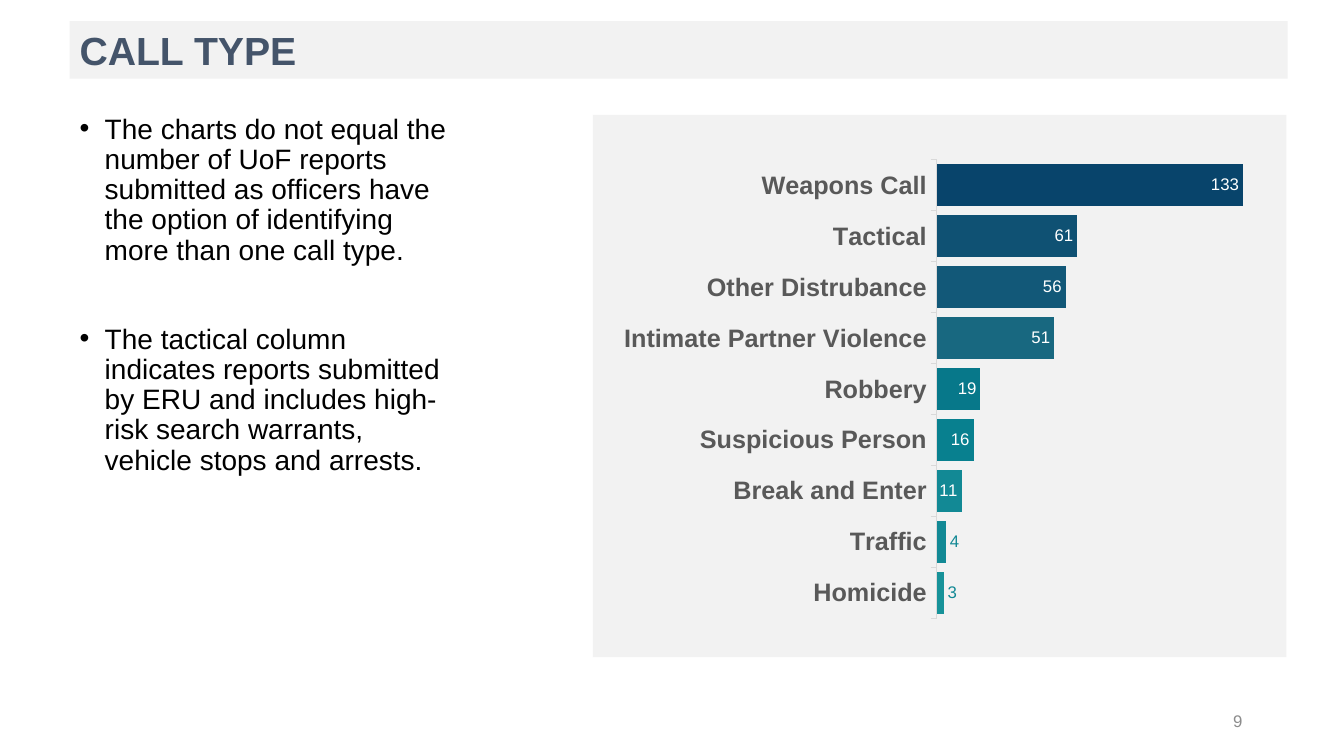
from dataclasses import dataclass

from lxml.etree import SubElement
from pptx import Presentation
from pptx.chart.data import CategoryChartData
from pptx.dml.color import RGBColor
from pptx.enum.chart import XL_CHART_TYPE, XL_LABEL_POSITION, XL_TICK_MARK
from pptx.enum.shapes import MSO_SHAPE
from pptx.enum.text import MSO_ANCHOR, PP_ALIGN
from pptx.oxml.ns import qn
from pptx.util import Inches, Pt


@dataclass(frozen=True)
class Theme:
    """Colours, font and type sizes of the slide."""
    font: str = "Arial"
    panel: str = "F2F2F2"
    title: str = "44546A"
    body: str = "000000"
    muted: str = "8C8C8C"
    axis_text: str = "595959"
    axis_line: str = "D9D9D9"
    label_in: str = "FFFFFF"
    label_out: str = "128995"
    title_size: int = 28
    body_size: int = 20
    axis_size: int = 18
    small_size: int = 12


THEME = Theme()

CALLS = [
    ("Homicide", 3, "179299"),
    ("Traffic", 4, "128995"),
    ("Break and Enter", 11, "128995"),
    ("Suspicious Person", 16, "08808F"),
    ("Robbery", 19, "07788A"),
    ("Intimate Partner Violence", 51, "186880"),
    ("Other Distrubance", 56, "125878"),
    ("Tactical", 61, "0F5173"),
    ("Weapons Call", 133, "08446B"),
]
SMALL_COUNT = 10

NOTES = [
    "The charts do not equal the number of UoF reports submitted as officers "
    "have the option of identifying more than one call type.",
    "The tactical column indicates reports submitted by ERU and includes "
    "high-risk search warrants, vehicle stops and arrests.",
]


def style_font(font, size, color, bold=False):
    """Apply the theme font with a size and colour."""
    font.name = THEME.font
    font.size = Pt(size)
    font.bold = bold
    font.color.rgb = RGBColor.from_string(color)


def add_run(p, text, size, color, bold=False):
    """Append one styled run to a paragraph."""
    r = p.add_run()
    r.text = text
    style_font(r.font, size, color, bold)


def add_panel(s, left, top, width, height):
    """Add a plain grey rectangle."""
    sp = s.shapes.add_shape(MSO_SHAPE.RECTANGLE, Inches(left), Inches(top),
                            Inches(width), Inches(height))
    sp.shadow.inherit = False
    sp.fill.solid()
    sp.fill.fore_color.rgb = RGBColor.from_string(THEME.panel)
    sp.line.fill.background()
    return sp


def add_text_frame(s, left, top, width, height):
    """Add a wrapping text box and return its text frame."""
    box = s.shapes.add_textbox(Inches(left), Inches(top),
                               Inches(width), Inches(height))
    box.text_frame.word_wrap = True
    return box.text_frame


def add_title(s, text):
    """Add the title band."""
    tf = add_panel(s, 0.69, 0.21, 12.08, 0.57).text_frame
    tf.vertical_anchor = MSO_ANCHOR.TOP
    p = tf.paragraphs[0]
    p.alignment = PP_ALIGN.LEFT
    add_run(p, text, THEME.title_size, THEME.title, bold=True)


def add_bullets(s, notes):
    """Add the bulleted notes with a wide gap between them."""
    tf = add_text_frame(s, 0.69, 1.09, 3.85, 6.02)
    for i, note in enumerate(notes):
        p = tf.add_paragraph() if i else tf.paragraphs[0]
        p.line_spacing = 0.9
        p.space_before = Pt(42 if i else 0)
        pPr = p._p.get_or_add_pPr()
        pPr.set("marL", str(Inches(0.25)))
        pPr.set("indent", str(-Inches(0.25)))
        SubElement(pPr, qn("a:buFont"), typeface=THEME.font)
        SubElement(pPr, qn("a:buChar"), char="•")
        add_run(p, note, THEME.body_size, THEME.body)


def add_page_number(s, number):
    """Add the page number at the lower right."""
    tf = add_text_frame(s, 9.42, 6.95, 3, 0.4)
    tf.vertical_anchor = MSO_ANCHOR.MIDDLE
    p = tf.paragraphs[0]
    p.alignment = PP_ALIGN.RIGHT
    add_run(p, number, THEME.small_size, THEME.muted)


def style_axes(chart):
    """Show the category axis and hide the value axis."""
    axis = chart.category_axis
    axis.major_tick_mark = XL_TICK_MARK.OUTSIDE
    axis.has_major_gridlines = False
    axis.format.line.color.rgb = RGBColor.from_string(THEME.axis_line)
    axis.format.line.width = Pt(0.75)
    style_font(axis.tick_labels.font, THEME.axis_size, THEME.axis_text, bold=True)
    values = chart.value_axis
    values.visible = False
    values.has_major_gridlines = False
    values.minimum_scale = 0
    values.maximum_scale = 140


def add_call_chart(s, calls):
    """Add the bar chart of call types with its own colour per bar."""
    data = CategoryChartData()
    data.categories = [name for name, _, _ in calls]
    data.add_series("Series 1", [count for _, count, _ in calls])
    chart = s.shapes.add_chart(XL_CHART_TYPE.BAR_CLUSTERED, Inches(6.06),
                               Inches(1.49), Inches(6.56), Inches(4.74),
                               data).chart
    chart.has_legend = False
    chart.has_title = False
    style_font(chart.font, THEME.small_size, THEME.body)
    style_axes(chart)
    plot = chart.plots[0]
    plot.vary_by_categories = False
    plot.gap_width = 23
    plot.overlap = 12
    series = plot.series[0]
    labels = series.data_labels
    labels.show_value = True
    labels.position = XL_LABEL_POSITION.INSIDE_END
    style_font(labels.font, THEME.small_size, THEME.label_in)
    for i, (_, count, color) in enumerate(calls):
        point = series.points[i]
        point.format.fill.solid()
        point.format.fill.fore_color.rgb = RGBColor.from_string(color)
        if count < SMALL_COUNT:
            label = point.data_label
            style_font(label.font, THEME.small_size, THEME.label_out)
            label.position = XL_LABEL_POSITION.OUTSIDE_END


def main():
    """Build and save the slide."""
    prs = Presentation()
    prs.slide_width, prs.slide_height = Inches(13.33), Inches(7.5)
    s = prs.slides.add_slide(prs.slide_layouts[6])
    add_panel(s, 5.88, 1.14, 6.88, 5.38)
    add_bullets(s, NOTES)
    add_title(s, "CALL TYPE")
    add_page_number(s, "9")
    add_call_chart(s, CALLS)
    prs.save("out.pptx")


if __name__ == "__main__":
    main()
